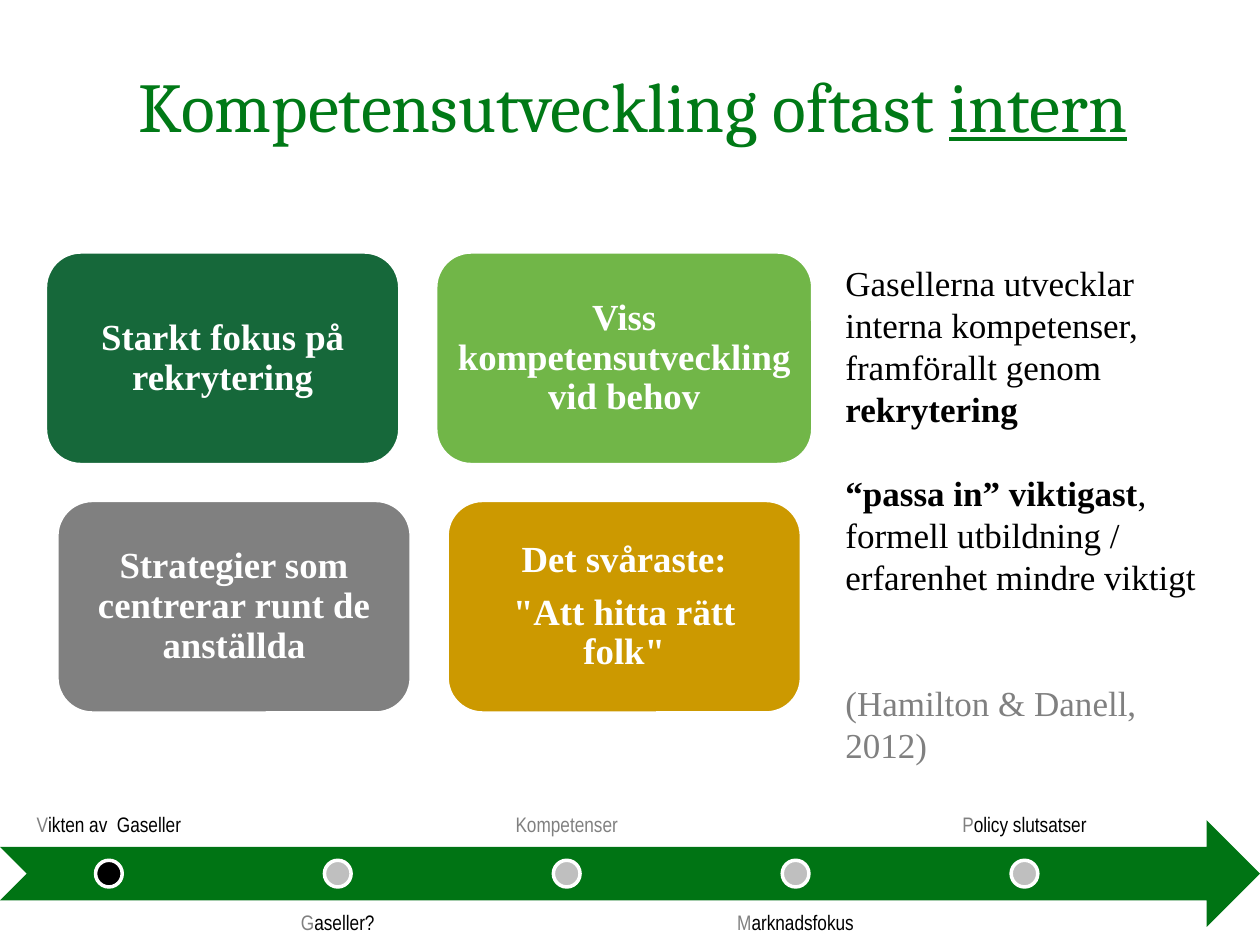
import dataclasses
import typing

import pptx
import pptx.dml.color
import pptx.enum.shapes
import pptx.enum.text
import pptx.util

Pt = pptx.util.Pt
Shape = pptx.enum.shapes.MSO_SHAPE
Align = pptx.enum.text.PP_ALIGN
Anchor = pptx.enum.text.MSO_ANCHOR

SERIF = "Times New Roman"
GREY = "808080"
BLACK = "000000"
WHITE = "FFFFFF"


@dataclasses.dataclass
class Run:
    text: str
    color: str = BLACK
    bold: bool = False
    underline: bool = False


@dataclasses.dataclass
class Card:
    paragraphs: list[str]
    fill: str
    width: float = 202.5


@dataclasses.dataclass
class Milestone:
    initial: str
    rest: str
    dot: str = "BFBFBF"


CARD_ROWS = [
    [
        Card(["Starkt fokus på rekrytering"], "16683A"),
        Card(["Viss kompetensutveckling vid behov"], "71B648", 215.5),
    ],
    [
        Card(["Strategier som centrerar runt de anställda"], GREY),
        Card(["Det svåraste:", '"Att hitta rätt folk"'], "CC9900"),
    ],
]
CARD_CENTER, CARD_TOP, CARD_HEIGHT, CARD_GAP = 245.25, 144, 121.5, 20.5

MILESTONES = [
    Milestone("V", "ikten av  Gaseller", BLACK),
    Milestone("G", "aseller?"),
    Milestone("Kompetenser", ""),
    Milestone("M", "arknadsfokus"),
    Milestone("P", "olicy slutsatser"),
]
STEP, LABEL_WIDTH, LABEL_HEIGHT, DOT = 130.8, 124.5, 61, 15.25
ARROW_TOP, ARROW_HEIGHT = 468.75, 61


def rgb(color: str) -> pptx.dml.color.RGBColor:
    return pptx.dml.color.RGBColor.from_string(color)


def write(shape: typing.Any, paragraphs: list[list[Run]], *, size: float, font: str = SERIF,
          align: Align = Align.LEFT, anchor: Anchor = Anchor.TOP, spacing: float = 1.0,
          gaps: tuple[float, ...] = (), insets: tuple[float, float] = (7.2, 3.6)) -> None:
    frame = shape.text_frame
    frame.word_wrap = True
    frame.vertical_anchor = anchor
    frame.margin_left = frame.margin_right = Pt(insets[0])
    frame.margin_top = frame.margin_bottom = Pt(insets[1])
    for index, runs in enumerate(paragraphs):
        paragraph = frame.add_paragraph() if index else frame.paragraphs[0]
        paragraph.alignment = align
        paragraph.line_spacing = spacing
        if index and gaps:
            paragraph.space_before = Pt(gaps[index - 1])
        for piece in runs:
            run = paragraph.add_run()
            run.text = piece.text
            run.font.name = font
            run.font.size = Pt(size)
            run.font.bold = piece.bold
            run.font.underline = piece.underline
            run.font.color.rgb = rgb(piece.color)


def add_text(slide: typing.Any, left: float, top: float, width: float, height: float) -> typing.Any:
    return slide.shapes.add_textbox(Pt(left), Pt(top), Pt(width), Pt(height))


def add_figure(slide: typing.Any, preset: Shape, left: float, top: float, width: float,
               height: float, fill: str, outline: str | None = WHITE) -> typing.Any:
    figure = slide.shapes.add_shape(preset, Pt(left), Pt(top), Pt(width), Pt(height))
    figure.shadow.inherit = False
    figure.fill.solid()
    figure.fill.fore_color.rgb = rgb(fill)
    if outline:
        figure.line.color.rgb = rgb(outline)
        figure.line.width = Pt(2)
    else:
        figure.line.fill.background()
    return figure


def draw_cards(slide: typing.Any) -> None:
    for row, cards in enumerate(CARD_ROWS):
        total = sum(card.width for card in cards) + CARD_GAP * (len(cards) - 1)
        left = CARD_CENTER - total / 2
        top = CARD_TOP + row * (CARD_HEIGHT + CARD_GAP)
        for card in cards:
            box = add_figure(slide, Shape.ROUNDED_RECTANGLE, left, top, card.width,
                             CARD_HEIGHT, card.fill)
            write(box, [[Run(text, WHITE, bold=True)] for text in card.paragraphs], size=21,
                  align=Align.CENTER, anchor=Anchor.MIDDLE, spacing=0.9, gaps=(7.35,),
                  insets=(6.3, 6.3))
            left += card.width + CARD_GAP


def draw_timeline(slide: typing.Any) -> None:
    add_figure(slide, Shape.NOTCHED_RIGHT_ARROW, 0, ARROW_TOP, 720, ARROW_HEIGHT, "007414", None)
    for index, milestone in enumerate(MILESTONES):
        left = index * STEP
        below = index % 2 == 1
        label = add_text(slide, left, 515 if below else 423.5, LABEL_WIDTH, LABEL_HEIGHT)
        runs = [Run(milestone.initial, GREY)]
        if milestone.rest:
            runs.append(Run(milestone.rest))
        write(label, [runs], size=12, font="Arial Narrow", align=Align.CENTER,
              anchor=Anchor.TOP if below else Anchor.BOTTOM, spacing=0.9, insets=(6.3, 6.3))
        add_figure(slide, Shape.OVAL, left + (LABEL_WIDTH - DOT) / 2,
                   ARROW_TOP + (ARROW_HEIGHT - DOT) / 2, DOT, DOT, milestone.dot)


def main() -> None:
    deck = pptx.Presentation()
    deck.slide_width, deck.slide_height = Pt(720), Pt(540)
    slide = deck.slides.add_slide(deck.slide_layouts[6])

    title = add_text(slide, 31, 34, 661.5, 51)
    write(title, [[Run("Kompetensutveckling oftast ", "007916"),
                   Run("intern", "007916", underline=True)]],
          size=40, font="Cambria", align=Align.CENTER, anchor=Anchor.MIDDLE)

    draw_timeline(slide)
    draw_cards(slide)

    findings = add_text(slide, 476, 146, 231, 250)
    write(findings, [
        [Run("Gasellerna utvecklar interna kompetenser, framförallt genom "),
         Run("rekrytering", bold=True)],
        [Run("“passa in” viktigast", bold=True),
         Run(", formell utbildning / erfarenhet mindre viktigt")],
        [Run("(Hamilton & Danell, 2012)", GREY)],
    ], size=20, gaps=(24, 48))

    deck.save("out.pptx")


if __name__ == "__main__":
    main()
